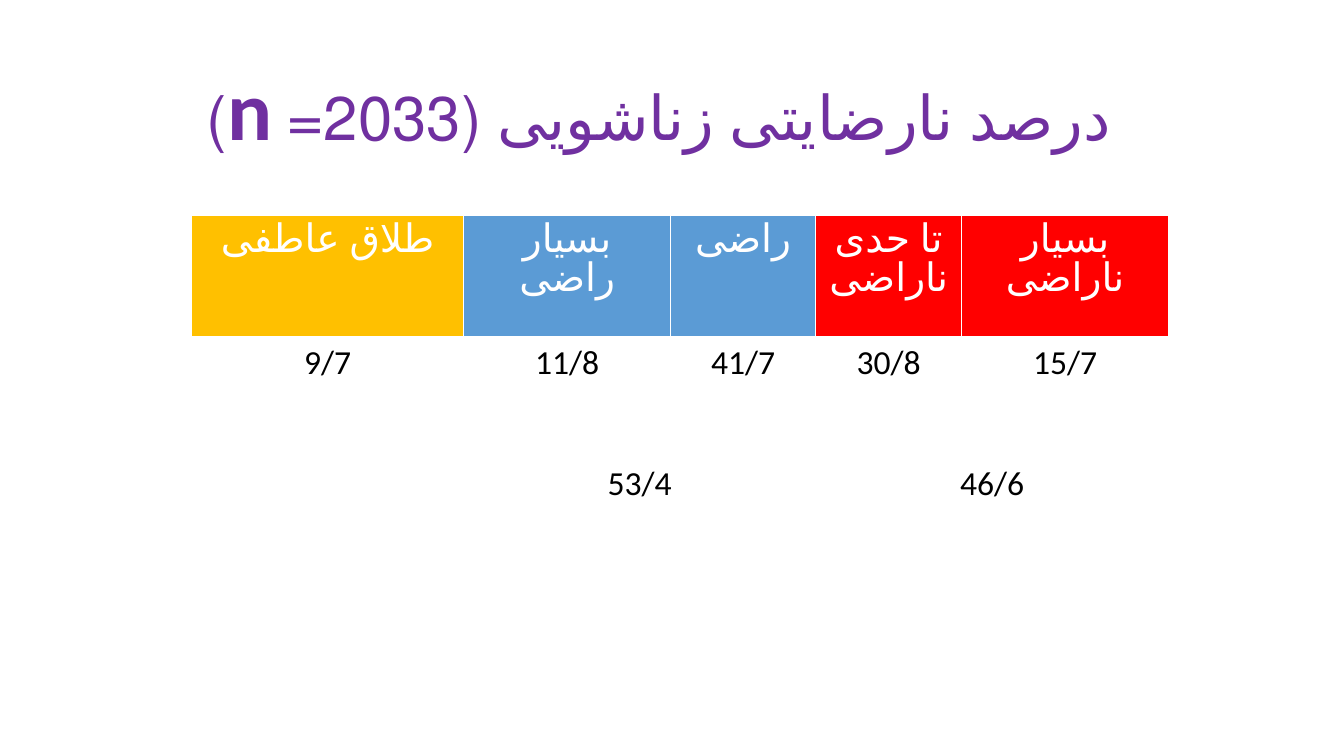
from pptx import Presentation
from pptx.dml.color import RGBColor
from pptx.enum.lang import MSO_LANGUAGE_ID as LANGUAGE
from pptx.enum.text import MSO_ANCHOR, PP_ALIGN
from pptx.oxml.ns import qn
from pptx.util import Inches, Pt
from lxml.etree import SubElement

FONT = "Calibri"
COLORS = {
    "title": "7030A0",
    "divorce": "FFC000",
    "satisfied": "5B9BD5",
    "dissatisfied": "FF0000",
    "white": "FFFFFF",
    "black": "000000",
}
# text, size, bold
TITLE_RUNS = [
    ("درصد نارضایتی زناشویی (2033= ", 44, False),
    ("n", 60, True),
    (")", 44, False),
]
# heading, fill, percentage, column width
GROUPS = [
    ("طلاق عاطفی", "divorce", "9/7", 2.7),
    ("بسیار راضی", "satisfied", "11/8", 2.05),
    ("راضی", "satisfied", "41/7", 1.44),
    ("تا حدی ناراضی", "dissatisfied", "30/8", 1.45),
    ("بسیار ناراضی", "dissatisfied", "15/7", 2.05),
]
# first column, last column, total
TOTALS = [(1, 2, "53/4"), (3, 4, "46/6")]
ROW_HEIGHTS = [1.21, 1.2, 1.2]


def rgb(name):
    return RGBColor.from_string(COLORS[name])


def format_run(run, size, color, bold=False, persian=False):
    run.font.name = FONT
    run.font.size = Pt(size)
    run.font.bold = bold
    run.font.color.rgb = rgb(color)
    if persian:
        run.font.language_id = LANGUAGE.FARSI


def align_center(paragraph, right_to_left=False):
    paragraph.alignment = PP_ALIGN.CENTER
    if right_to_left:
        paragraph._p.get_or_add_pPr().set("rtl", "1")


def write_cell(cell, text, size, color, persian=False):
    paragraph = cell.text_frame.paragraphs[0]
    paragraph.text = text
    align_center(paragraph, right_to_left=persian)
    for run in paragraph.runs:
        format_run(run, size, color, persian=persian)


def style_cell(cell, fill, bottom_width):
    """Give the cell white borders and a solid fill."""
    properties = cell._tc.get_or_add_tcPr()
    widths = {"a:lnL": 1, "a:lnR": 1, "a:lnT": 1, "a:lnB": bottom_width}
    for tag, width in widths.items():
        line = SubElement(properties, qn(tag), w=str(Pt(width)))
        solid = SubElement(line, qn("a:solidFill"))
        SubElement(solid, qn("a:srgbClr"), val=COLORS["white"])
    cell.fill.solid()
    cell.fill.fore_color.rgb = rgb(fill)


def add_title(slide):
    box = slide.shapes.add_textbox(Inches(0.37), Inches(0.4), Inches(12.34), Inches(1.45))
    frame = box.text_frame
    frame.word_wrap = True
    frame.vertical_anchor = MSO_ANCHOR.MIDDLE
    paragraph = frame.paragraphs[0]
    align_center(paragraph, right_to_left=True)
    paragraph.line_spacing = 0.9
    for text, size, bold in TITLE_RUNS:
        run = paragraph.add_run()
        run.text = text
        format_run(run, size, "title", bold, persian=True)


def add_percentage_table(slide):
    width = sum(group[3] for group in GROUPS)
    table = slide.shapes.add_table(
        len(ROW_HEIGHTS), len(GROUPS), Inches(1.9), Inches(2.14),
        Inches(width), Inches(sum(ROW_HEIGHTS)),
    ).table
    for row, height in zip(table.rows, ROW_HEIGHTS):
        row.height = Inches(height)
    for column, (heading, fill, percentage, column_width) in enumerate(GROUPS):
        table.columns[column].width = Inches(column_width)
        style_cell(table.cell(0, column), fill, 3)
        for row in (1, 2):
            style_cell(table.cell(row, column), "white", 1)
        write_cell(table.cell(0, column), heading, 28, "white", persian=True)
        write_cell(table.cell(1, column), percentage, 24, "black")
    for first, last, total in TOTALS:
        table.cell(2, first).merge(table.cell(2, last))
        write_cell(table.cell(2, first), total, 24, "black")


def main():
    presentation = Presentation()
    presentation.slide_width = Inches(13.33)
    presentation.slide_height = Inches(7.5)
    slide = presentation.slides.add_slide(presentation.slide_layouts[6])
    add_title(slide)
    add_percentage_table(slide)
    presentation.save("out.pptx")


if __name__ == "__main__":
    main()
